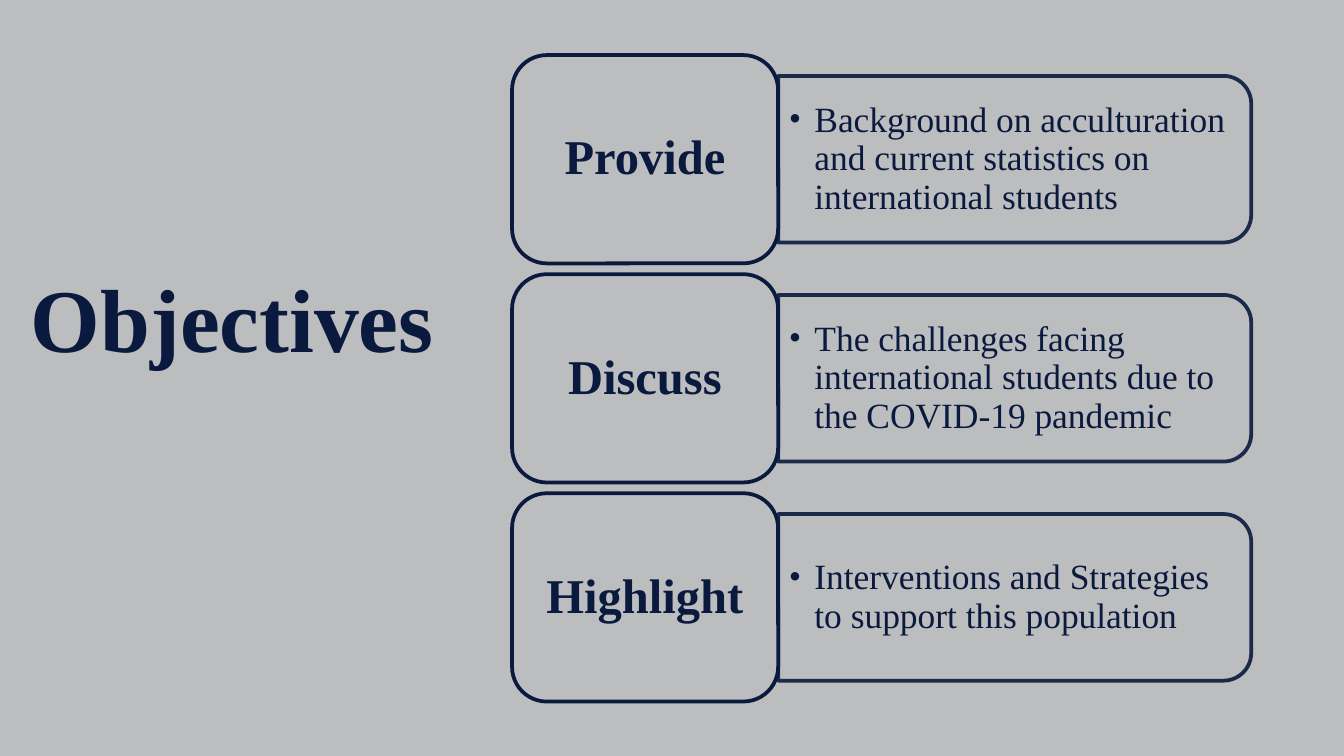
import pptx
import pptx.util
import pptx.dml.color
import pptx.enum.shapes
import pptx.enum.text
import pptx.oxml
import pptx.oxml.ns
from pptx.util import Inches

COLORS = {"navy": "0A193E", "grey": "BCBDBF"}
FONT = "Times New Roman"
ALIGN = pptx.enum.text.PP_ALIGN
ANCHOR = pptx.enum.text.MSO_ANCHOR
SHAPE = pptx.enum.shapes.MSO_SHAPE

OBJECTIVES = [
    ("Provide", "Background on acculturation and current statistics on international students"),
    ("Discuss", "The challenges facing international students due to the COVID-19 pandemic"),
    ("Highlight", "Interventions and Strategies to support this population"),
]


def color(name):
    return pptx.dml.color.RGBColor.from_string(COLORS[name])


def add_element(parent, tag, attributes):
    """Append one drawing element to an XML parent."""
    parent.append(pptx.oxml.parse_xml(
        f'<a:{tag} {pptx.oxml.ns.nsdecls("a")} {attributes}/>'))


def write_text(box, text, size, bold=False, align=ALIGN.LEFT, anchor=ANCHOR.MIDDLE,
               insets=(0.1, 0.05), spacing=0.9, bullet_indent=None):
    """Fill a box with one formatted paragraph."""
    frame = box.text_frame
    frame.word_wrap = True
    frame.auto_size = pptx.enum.text.MSO_AUTO_SIZE.NONE
    frame.vertical_anchor = anchor
    frame.margin_left = frame.margin_right = Inches(insets[0])
    frame.margin_top = frame.margin_bottom = Inches(insets[1])
    para = frame.paragraphs[0]
    para.alignment = align
    para.line_spacing = spacing
    if bullet_indent:
        para.level = 1
        props = para._p.get_or_add_pPr()
        props.set("marL", str(Inches(bullet_indent)))
        props.set("indent", str(-Inches(bullet_indent)))
        add_element(props, "buFont", f'typeface="{FONT}"')
        add_element(props, "buChar", 'char="•"')
    span = para.add_run()
    span.text = text
    span.font.name = FONT
    span.font.size = pptx.util.Pt(size)
    span.font.bold = bold
    span.font.color.rgb = color("navy")


def add_outlined(page, kind, left, top, width, height, opacity=100):
    """Add a grey shape with a navy outline."""
    shape = page.shapes.add_shape(
        kind, Inches(left), Inches(top), Inches(width), Inches(height))
    shape.shadow.inherit = False
    shape.fill.solid()
    shape.fill.fore_color.rgb = color("grey")
    shape.line.color.rgb = color("navy")
    shape.line.width = pptx.util.Pt(2)
    if opacity < 100:
        for tint in shape._element.spPr.iter(pptx.oxml.ns.qn("a:srgbClr")):
            add_element(tint, "alpha", f'val="{opacity * 1000}"')
    return shape


def add_title(page, left, top, width, height):
    title = page.shapes.title
    title.left, title.top = Inches(left), Inches(top)
    title.width, title.height = Inches(width), Inches(height)
    write_text(title, "Objectives", size=48, bold=True, anchor=ANCHOR.BOTTOM)


def add_objective(page, left, top, width, height, label, detail):
    """Add one row: a label block and the detail panel to its right."""
    label_width, panel_height = 1.98, 1.24
    panel_left, panel_width = left + label_width, width - label_width
    center_x, center_y = panel_left + panel_width / 2, top + height / 2

    # Detail panel, turned so that its rounded corners face right
    panel = add_outlined(page, SHAPE.ROUND_2_SAME_RECTANGLE,
                         center_x - panel_height / 2, center_y - panel_width / 2,
                         panel_height, panel_width, opacity=90)
    panel.rotation = 90

    # Detail text, kept upright over the panel
    text_height = panel_height - 0.12
    box = page.shapes.add_textbox(
        Inches(panel_left), Inches(center_y - text_height / 2),
        Inches(panel_width - 0.06), Inches(text_height))
    write_text(box, detail, size=19, insets=(0.08, 0.04), bullet_indent=0.19)

    # Label block
    block = add_outlined(page, SHAPE.ROUNDED_RECTANGLE, left, top, label_width, height)
    write_text(block, label, size=26, bold=True, align=ALIGN.CENTER, insets=(0.11, 0.05))


def main():
    # Widescreen page, 16 by 9
    deck = pptx.Presentation()
    deck.slide_width = Inches(10)
    deck.slide_height = deck.slide_width * 9 // 16
    page = deck.slides.add_slide(deck.slide_layouts.get_by_name("Title Only"))
    page.background.fill.solid()
    page.background.fill.fore_color.rgb = color("grey")

    add_title(page, 0.13, 1.87, 3.31, 0.95)

    # Three equal rows
    row_height, gap = 1.55, 0.08
    for index, (label, detail) in enumerate(OBJECTIVES):
        top = 0.41 + index * (row_height + gap)
        add_objective(page, 3.81, top, 5.5, row_height, label, detail)

    deck.save("out.pptx")


if __name__ == "__main__":
    main()
